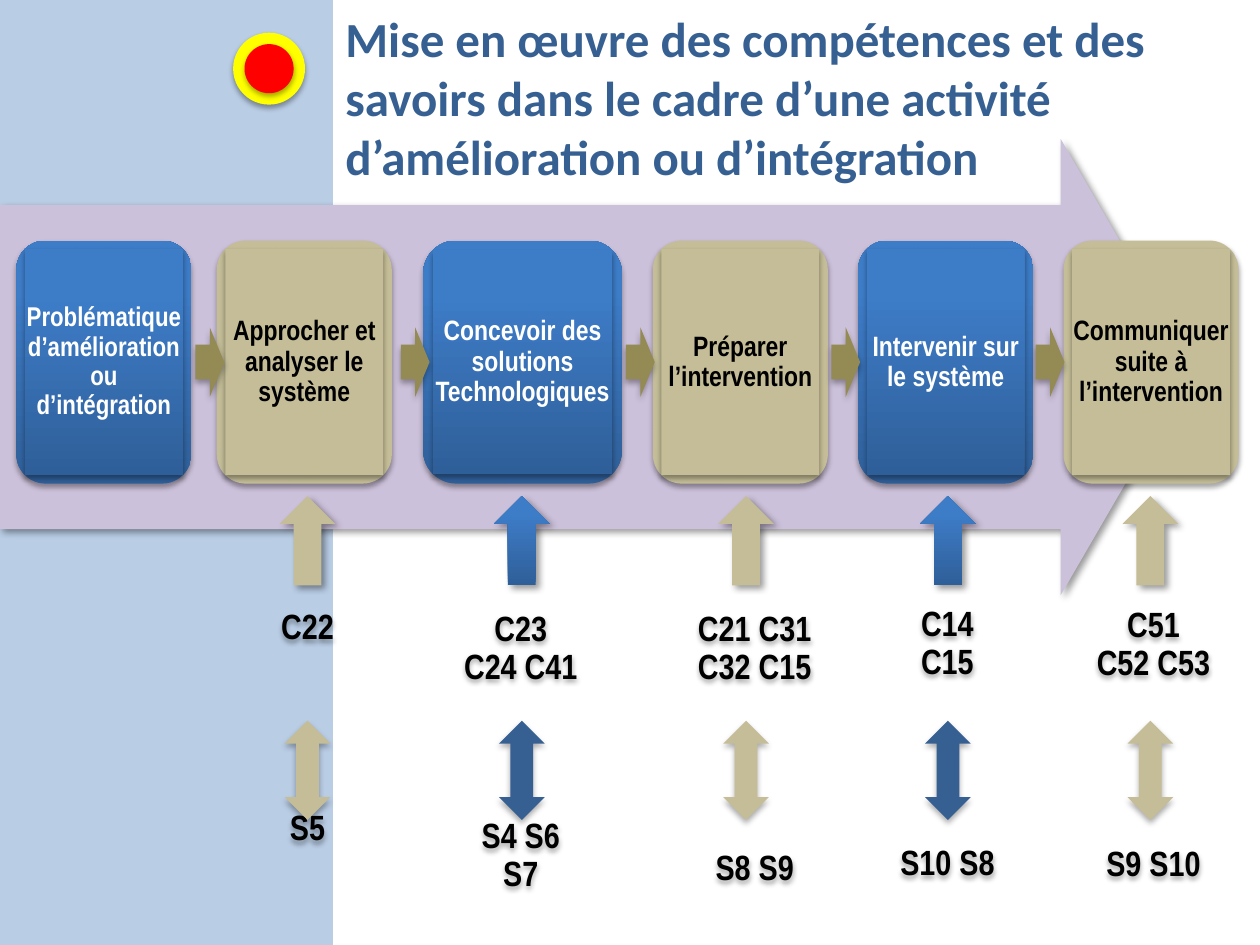
from lxml import etree
from pptx import Presentation
from pptx.dml.color import RGBColor
from pptx.enum.shapes import MSO_SHAPE
from pptx.enum.text import MSO_ANCHOR, MSO_AUTO_SIZE, PP_ALIGN
from pptx.oxml.ns import qn
from pptx.util import Cm, Pt

RECTANGLE, ROUNDED = MSO_SHAPE.RECTANGLE, MSO_SHAPE.ROUNDED_RECTANGLE
OVAL, RIGHT_ARROW = MSO_SHAPE.OVAL, MSO_SHAPE.RIGHT_ARROW
UP_ARROW, UP_DOWN_ARROW = MSO_SHAPE.UP_ARROW, MSO_SHAPE.UP_DOWN_ARROW
MIDDLE, TOP = MSO_ANCHOR.MIDDLE, MSO_ANCHOR.TOP
CENTER, LEFT = PP_ALIGN.CENTER, PP_ALIGN.LEFT

PALE_BLUE = RGBColor(0xB9, 0xCD, 0xE5)
NAVY = RGBColor(0x37, 0x60, 0x92)
LILAC = RGBColor(0xCC, 0xC1, 0xDA)
TAN = RGBColor(0xC4, 0xBD, 0x97)
OLIVE = RGBColor(0x94, 0x8A, 0x54)
YELLOW = RGBColor(0xFF, 0xFF, 0x00)
RED = RGBColor(0xFF, 0x00, 0x00)
WHITE = RGBColor(0xFF, 0xFF, 0xFF)
BLACK = RGBColor(0x00, 0x00, 0x00)
BLUE_GRADIENT = ((0, RGBColor(0x2F, 0x5F, 0x99)), (0.8, RGBColor(0x3D, 0x7C, 0xC7)))

# opacity in percent, blur and distance in points, direction in degrees
SOFT_SHADOW = (35, 3.1, 1.8, 90)
SMALL_SHADOW = (32, 3.5, 2.2, 90)
SLANTED_SHADOW = (40, 4, 3, 45)

TITLE = ("Mise en œuvre des compétences et des savoirs dans le cadre "
         "d’une activité d’amélioration ou d’intégration")

# text, left, width, font size
STEPS = [
    ("Problématique d’amélioration ou d’intégration", 0.33, 3.53, 15.5),
    ("Approcher et analyser le système", 4.37, 3.53, 16),
    ("Concevoir des solutions Technologiques", 8.53, 4.01, 16),
    ("Préparer l’intervention", 13.16, 3.53, 16),
    ("Intervenir sur le système", 17.3, 3.53, 16),
    ("Communiquer suite à l’intervention", 21.44, 3.53, 16),
]
STEP_ARROW_LEFTS = [3.94, 8.08, 12.62, 16.76, 20.88]

# competences, knowledge, arrow centre, label box, gap in points
COLUMNS = [
    ("C22", "S5", 6.2, (4.7, 11.91, 3, 5.56), 93),
    ("C23\vC24 C41", "S4 S6\vS7", 10.52, (8.86, 12.42, 3.28, 5.51), 75),
    ("C21 C31\vC32 C15", "S8 S9", 15.04, (13.54, 12.12, 3.35, 5.99), 93),
    ("C14\vC15", "S10 S8", 19.11, (17.6, 12.32, 3, 5.38), 93),
    ("C51\vC52 C53", "S9 S10", 23.19, (21.59, 12.14, 3.33, 5.79), 93),
]

STEP_TOP, STEP_HEIGHT = 4.85, 4.9
INSET_RATIO = 0.049


def add_shadow(shape, opacity, blur, distance, direction):
    effects = shape._element.spPr.find(qn("a:effectLst"))
    shadow = etree.SubElement(
        effects, qn("a:outerShdw"), blurRad=str(Pt(blur)), dist=str(Pt(distance)),
        dir=str(direction * 60000), algn="ctr", rotWithShape="0")
    color = etree.SubElement(shadow, qn("a:srgbClr"), val=str(BLACK))
    etree.SubElement(color, qn("a:alpha"), val=str(opacity * 1000))


def add_figure(slide, kind, box, fill, shadow=None):
    shape = slide.shapes.add_shape(kind, *map(Cm, box))
    shape.line.fill.background()
    if fill is None:
        shape.fill.background()
    elif fill is BLUE_GRADIENT:
        shape.fill.gradient()
        shape.fill.gradient_angle = 90
        for stop, (position, color) in zip(shape.fill.gradient_stops, fill):
            stop.position = position
            stop.color.rgb = color
    else:
        shape.fill.solid()
        shape.fill.fore_color.rgb = fill
    shape.shadow.inherit = False
    if shadow:
        add_shadow(shape, *shadow)
    return shape


def write(shape, texts, font, size, color, frame_format, paragraph_format, gap=0):
    frame = shape.text_frame
    for name, value in frame_format.items():
        setattr(frame, name, value)
    for index, text in enumerate(texts):
        paragraph = frame.add_paragraph() if index else frame.paragraphs[0]
        paragraph.text = text
        for name, value in paragraph_format.items():
            setattr(paragraph, name, value)
        if index:
            paragraph.space_before = Pt(gap)
        for run in paragraph.runs:
            run.font.color.rgb = color
            for name, value in {"name": font, "size": Pt(size), "bold": True}.items():
                setattr(run.font, name, value)


def label_frame(wrap, margin):
    return {"vertical_anchor": MIDDLE, "word_wrap": wrap,
            "margin_left": 0, "margin_right": 0,
            "margin_top": Cm(margin), "margin_bottom": Cm(margin)}


LABEL_PARAGRAPH = {"alignment": CENTER, "line_spacing": 0.9}


def add_steps(slide):
    for index, (text, left, width, size) in enumerate(STEPS):
        fill, color = (TAN, BLACK) if index % 2 else (BLUE_GRADIENT, WHITE)
        inset = width * INSET_RATIO
        add_figure(slide, ROUNDED, (left, STEP_TOP, width, STEP_HEIGHT), fill, SOFT_SHADOW)
        inner_box = (left + inset, STEP_TOP + inset,
                     width - 2 * inset, STEP_HEIGHT - 2 * inset)
        panel = add_figure(slide, RECTANGLE, inner_box, fill, SOFT_SHADOW)
        write(panel, [text], "Arial Narrow", size, color,
              label_frame(True, 0.18), LABEL_PARAGRAPH)
    for left in STEP_ARROW_LEFTS:
        add_figure(slide, RIGHT_ARROW, (left, 6.6, 0.58, 1.4), OLIVE, SMALL_SHADOW)


def add_columns(slide):
    for index, (competences, knowledge, center, box, gap) in enumerate(COLUMNS):
        label = add_figure(slide, OVAL, box, None, SOFT_SHADOW)
        write(label, [competences, knowledge], "Arial Narrow", 20, BLACK,
              label_frame(False, 0.2), LABEL_PARAGRAPH, gap)
        double_fill, up_fill = (NAVY, BLUE_GRADIENT) if index % 2 else (TAN, TAN)
        add_figure(slide, UP_DOWN_ARROW, (center - 0.46, 14.53, 0.92, 2),
                   double_fill, SMALL_SHADOW)
        add_figure(slide, UP_ARROW, (center - 0.56, 10, 1.12, 1.8),
                   up_fill, SLANTED_SHADOW)


def main():
    presentation = Presentation()
    presentation.slide_width, presentation.slide_height = Cm(25.4), Cm(19.05)
    slide = presentation.slides.add_slide(presentation.slide_layouts[5])

    title = slide.shapes.title
    title_box = {"left": 6.71, "top": 0.05, "width": 18.69, "height": 2.67}
    for name, value in title_box.items():
        setattr(title, name, Cm(value))
    write(title, [TITLE], "Calibri", 28, NAVY,
          {"vertical_anchor": TOP, "word_wrap": True, "auto_size": MSO_AUTO_SIZE.NONE},
          {"alignment": LEFT})

    add_figure(slide, RECTANGLE, (0, 0, 6.71, 19.05), PALE_BLUE)
    add_figure(slide, OVAL, (4.7, 0.66, 1.45, 1.45), YELLOW, SOFT_SHADOW)
    add_figure(slide, OVAL, (4.93, 0.89, 0.99, 0.99), RED, SOFT_SHADOW)
    process = add_figure(slide, RIGHT_ARROW, (0, 2.8, 24.05, 9.2), LILAC, SLANTED_SHADOW)
    process.adjustments[0], process.adjustments[1] = 0.71, 0.29

    add_steps(slide)
    add_columns(slide)
    presentation.save("out.pptx")


if __name__ == "__main__":
    main()
